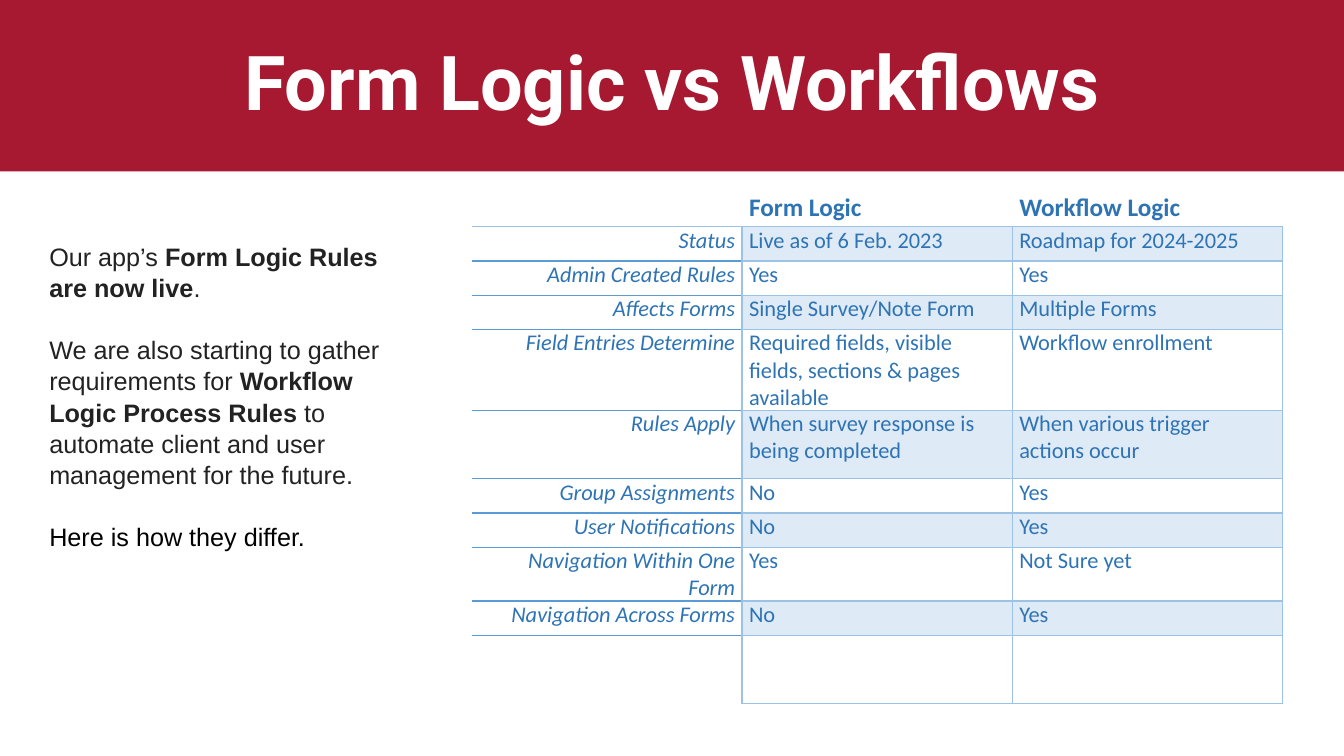
from lxml import etree
from pptx import Presentation
from pptx.dml.color import RGBColor
from pptx.enum.shapes import MSO_SHAPE
from pptx.enum.text import MSO_ANCHOR, MSO_AUTO_SIZE, PP_ALIGN
from pptx.oxml.ns import qn
from pptx.util import Inches, Pt

RECT = MSO_SHAPE.RECTANGLE
TOP, MIDDLE = MSO_ANCHOR.TOP, MSO_ANCHOR.MIDDLE
LEFT, CENTER, RIGHT = PP_ALIGN.LEFT, PP_ALIGN.CENTER, PP_ALIGN.RIGHT
RED, WHITE, BLUE, PALE = "A71930", "FFFFFF", "2E74B5", "DEEAF6"
LIGHT, MID = "9CC2E5", "5B9BD5"


def rgb(code):
    return RGBColor.from_string(code)


def add_run(para, text, font, size, color, bold=False, italic=False):
    run = para.add_run()
    run.text = text
    run.font.name, run.font.size = font, Pt(size)
    run.font.bold, run.font.italic = bold, italic
    run.font.color.rgb = rgb(color)


deck = Presentation()
deck.slide_width, deck.slide_height = Inches(13.33), Inches(7.5)
slide = deck.slides.add_slide(deck.slide_layouts[5])

# Red band behind the title
band = slide.shapes.add_shape(RECT, 0, 0, Inches(13.33), Inches(1.7))
band.shadow.inherit = False
band.fill.solid()
band.fill.fore_color.rgb = rgb(RED)
band.line.fill.background()
slide.shapes.title._element.addprevious(band._element)

# Title
title = slide.shapes.title
title.left, title.top = 0, 0
title.width, title.height = Inches(13.33), Inches(1.7)
frame = title.text_frame
frame.auto_size = MSO_AUTO_SIZE.NONE
frame.vertical_anchor = MIDDLE
para = frame.paragraphs[0]
para.alignment, para.line_spacing = CENTER, 0.9
add_run(para, "Form Logic vs Workflows", "Roboto", 54, WHITE, True)

# Introduction: each run is text, bold, colour
intro = [
    [("Our app’s ", False, "222222"),
     ("Form Logic Rules are now live", True, "222222"),
     (".", False, "222222")],
    [("We are also starting to gather requirements for ", False, "222222"),
     ("Workflow Logic Process Rules", True, "222222"),
     (" to automate client and user management for the future.", False, "222222")],
    [("Here is how they differ.", False, "000000")],
]
box = slide.shapes.add_textbox(Inches(0.39), Inches(2.33), Inches(3.72), Inches(4.04))
box.fill.solid()
box.fill.fore_color.rgb = rgb(WHITE)
frame = box.text_frame
frame.word_wrap = True
frame.vertical_anchor = TOP
for i, runs in enumerate(intro):
    para = frame.add_paragraph() if i else frame.paragraphs[0]
    para.line_spacing = 1.04
    para.space_before = Pt(21.6 if i else 0)
    for text, bold, color in runs:
        add_run(para, text, "Arial", 18, color, bold)

# Comparison table: row height, then the three cells
rows = [
    (0.34, "", "Form Logic", "Workflow Logic"),
    (0.34, "Status", "Live as of 6 Feb. 2023", "Roadmap for 2024-2025"),
    (0.34, "Admin Created Rules", "Yes", "Yes"),
    (0.34, "Affects Forms", "Single Survey/Note Form", "Multiple Forms"),
    (0.68, "Field Entries Determine",
     "Required fields, visible fields, sections & pages available",
     "Workflow enrollment"),
    (0.68, "Rules Apply", "When survey response is being completed",
     "When various trigger actions occur"),
    (0.34, "Group Assignments", "No", "Yes"),
    (0.34, "User Notifications", "No", "Yes"),
    (0.34, "Navigation Within One Form", "Yes", "Not Sure yet"),
    (0.34, "Navigation Across Forms", "No", "Yes"),
    (0.68, "", "", ""),
]
last = len(rows) - 1
table = slide.shapes.add_table(len(rows), 3, Inches(4.68), Inches(1.91),
                               Inches(8.04), Inches(4.76)).table
table.first_row = table.horz_banding = False
for col in table.columns:
    col.width = Inches(2.68)

for r, (high, *texts) in enumerate(rows):
    table.rows[r].height = Inches(high)
    for c, text in enumerate(texts):
        cell = table.cell(r, c)
        cell.margin_left = cell.margin_right = Inches(0.07)
        cell.margin_top = cell.margin_bottom = 0
        para = cell.text_frame.paragraphs[0]
        para.alignment = LEFT if c else RIGHT
        if text:
            add_run(para, text, "Calibri", 16 if r else 18, BLUE, r == 0, c == 0)

        # Odd rows are shaded beside their label
        if c and r % 2:
            cell.fill.solid()
            cell.fill.fore_color.rgb = rgb(PALE)
        else:
            cell.fill.background()

        # Borders: open header, open left edge, darker rules in the label column
        if r == 0:
            edges = {"lnL": None, "lnR": None, "lnT": None, "lnB": LIGHT}
        elif c:
            edges = dict.fromkeys(("lnL", "lnR", "lnT", "lnB"), LIGHT)
        else:
            edges = {"lnL": None, "lnR": LIGHT, "lnT": MID if r > 1 else LIGHT,
                     "lnB": MID if r < last else None}
        props = cell._tc.get_or_add_tcPr()
        for spot, (tag, color) in enumerate(edges.items()):
            line = etree.Element(qn("a:" + tag), w=str(Pt(1)))
            props.insert(spot, line)
            if color:
                paint = etree.SubElement(line, qn("a:solidFill"))
                etree.SubElement(paint, qn("a:srgbClr"), val=color)
            else:
                etree.SubElement(line, qn("a:noFill"))

deck.save("out.pptx")
